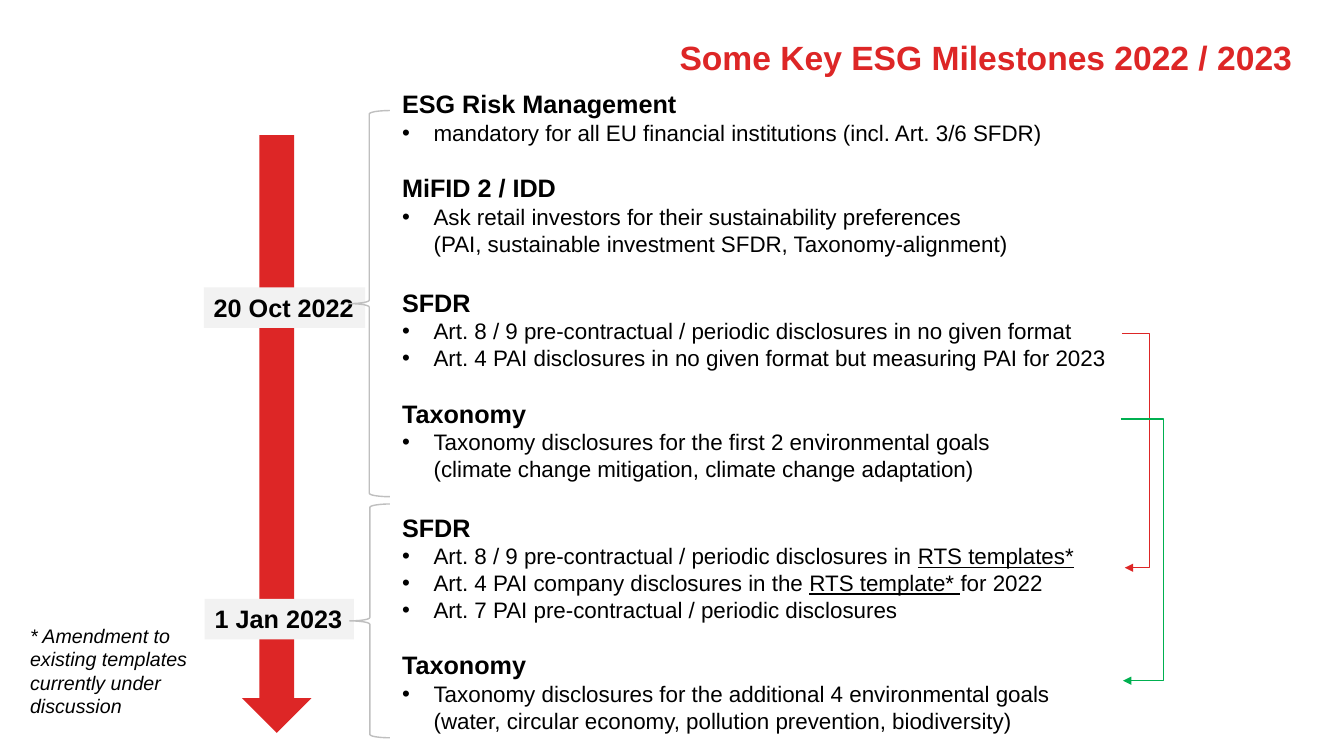
import pptx
import pptx.util
import pptx.dml.color
import pptx.enum.shapes
import pptx.enum.text
import pptx.oxml
import pptx.oxml.ns

Pt = pptx.util.Pt
qn = pptx.oxml.ns.qn
SHAPES = pptx.enum.shapes.MSO_SHAPE

# Content
COLORS = {"red": "DD2626", "green": "00B050", "label": "F2F2F2",
          "brace": "BFBFBF", "text": "000000"}
FONT = "Arial"
TITLE = "Some Key ESG Milestones 2022 / 2023"
FOOTNOTE = "* Amendment to existing templates\ncurrently under discussion"

# Heading, gap above it in points, bullets; each bullet is a list of runs,
# and a run given as a one-item tuple is underlined
MILESTONES = [
    ("ESG Risk Management", 0, [
        ["mandatory for all EU financial institutions (incl. Art. 3/6 SFDR)"]]),
    ("MiFID 2 / IDD", 19.2, [
        ["Ask retail investors for their sustainability preferences\n"
         "(PAI, sustainable investment SFDR, Taxonomy-alignment)"]]),
    ("SFDR", 21.6, [
        ["Art. 8 / 9 pre-contractual / periodic disclosures in no given format"],
        ["Art. 4 PAI disclosures in no given format but measuring PAI for 2023"]]),
    ("Taxonomy", 19.2, [
        ["Taxonomy disclosures for the first 2 environmental goals\n"
         "(climate change mitigation, climate change adaptation)"]]),
    ("SFDR", 21.6, [
        ["Art. 8 / 9 pre-contractual / periodic disclosures in ", ("RTS templates*",)],
        ["Art. 4 PAI company disclosures in the ", ("RTS template* ",), "for 2022"],
        ["Art. 7 PAI pre-contractual / periodic disclosures"]]),
    ("Taxonomy", 19.2, [
        ["Taxonomy disclosures for the additional 4 environmental goals\n"
         "(water, circular economy, pollution prevention, biodiversity)"]]),
]

# Places: left, top, width, height
TITLE_BOX = (356.4, 23, 573.8, 33.8)
BODY_BOX = (280, 59.8, 592, 494.6)
FOOTNOTE_BOX = (14.4, 442, 136.8, 74.9)
TIME_ARROW = (172.8, 96.5, 49.7, 427)
DATES = [("20 Oct 2022", (145.6, 205.2, 115.2, 29)),
         ("1 Jan 2023", (146.2, 427.7, 106.6, 29))]
BRACES = [(249, 79, 29.5, 275.8), (249.8, 360, 28.8, 167)]
# Colour, start, end, x of the bend
LINKS = [("red", (801.4, 238), (803.5, 405.5), 821.1),
         ("green", (800.7, 299.2), (802.1, 486.2), 831.5)]


def rgb(name):
    return pptx.dml.color.RGBColor.from_string(COLORS[name])


def place(shape, box):
    shape.left, shape.top, shape.width, shape.height = [Pt(v) for v in box]


def prepare(frame, wrap=True):
    frame.word_wrap = wrap
    frame.auto_size = pptx.enum.text.MSO_AUTO_SIZE.NONE
    frame.vertical_anchor = pptx.enum.text.MSO_ANCHOR.TOP
    frame.margin_left = frame.margin_right = Pt(7.2)
    frame.margin_top = frame.margin_bottom = Pt(3.6)


def write(paragraph, runs, size, color="text", bold=False, italic=False, gap=0,
          align=pptx.enum.text.PP_ALIGN.LEFT):
    paragraph.alignment = align
    paragraph.line_spacing = Pt(size * 1.2)
    paragraph.space_before = Pt(gap)
    paragraph.space_after = Pt(0)
    for item in runs:
        underlined = isinstance(item, tuple)
        text = item[0] if underlined else item
        for number, line in enumerate(text.split("\n")):
            if number:
                paragraph.add_line_break()
            run = paragraph.add_run()
            run.text = line
            run.font.name = FONT
            run.font.size = Pt(size)
            run.font.bold = bold
            run.font.italic = italic
            run.font.underline = underlined
            run.font.color.rgb = rgb(color)


def set_bullet(paragraph, indent, character=None):
    properties = paragraph._p.get_or_add_pPr()
    properties.set("marL", str(Pt(indent)))
    properties.set("indent", str(-Pt(indent)))
    if character:
        bullet = pptx.oxml.parse_xml(
            f'<a:buChar {pptx.oxml.ns.nsdecls("a")} char="{character}"/>')
    else:
        bullet = pptx.oxml.parse_xml(f'<a:buNone {pptx.oxml.ns.nsdecls("a")}/>')
    properties.append(bullet)


def add_shape(kind, box, fill=None, line=None):
    shape = slide.shapes.add_shape(kind, *[Pt(v) for v in box])
    shape.shadow.inherit = False
    if fill:
        shape.fill.solid()
        shape.fill.fore_color.rgb = rgb(fill)
    else:
        shape.fill.background()
    if line:
        shape.line.color.rgb = rgb(line)
        shape.line.width = Pt(1)
    else:
        shape.line.fill.background()
    return shape


presentation = pptx.Presentation()
presentation.slide_width, presentation.slide_height = Pt(960), Pt(540)
slide = presentation.slides.add_slide(presentation.slide_layouts[1])

# Title
title = slide.shapes.title
place(title, TITLE_BOX)
prepare(title.text_frame)
write(title.text_frame.paragraphs[0], [TITLE], 24, "red", bold=True,
      align=pptx.enum.text.PP_ALIGN.RIGHT)

# Milestone list
body = slide.placeholders[1]
place(body, BODY_BOX)
prepare(body.text_frame)
for index, (heading, gap, bullets) in enumerate(MILESTONES):
    frame = body.text_frame
    paragraph = frame.add_paragraph() if index else frame.paragraphs[0]
    write(paragraph, [heading], 18, bold=True, gap=gap)
    set_bullet(paragraph, 0)
    for runs in bullets:
        paragraph = frame.add_paragraph()
        write(paragraph, runs, 16)
        set_bullet(paragraph, 22.5, "•")

# Time arrow with its dates
add_shape(SHAPES.DOWN_ARROW, TIME_ARROW, fill="red")
for date, box in DATES:
    label = add_shape(SHAPES.RECTANGLE, box, fill="label")
    prepare(label.text_frame, wrap=False)
    write(label.text_frame.paragraphs[0], [date], 18, bold=True)

# Links from 2022 items to 2023 items
for color, start, end, bend in LINKS:
    link = slide.shapes.add_connector(pptx.enum.shapes.MSO_CONNECTOR.ELBOW,
                                      *[Pt(v) for v in start + end])
    link.line.color.rgb = rgb(color)
    link.line.width = Pt(1)
    properties = link._element.spPr
    guides = properties.find(qn("a:prstGeom")).get_or_add_avLst()
    ratio = round((bend - start[0]) / (end[0] - start[0]) * 100000)
    guides.append(pptx.oxml.parse_xml(
        f'<a:gd {pptx.oxml.ns.nsdecls("a")} name="adj1" fmla="val {ratio}"/>'))
    link.line._get_or_add_ln().append(pptx.oxml.parse_xml(
        f'<a:tailEnd {pptx.oxml.ns.nsdecls("a")} type="triangle"/>'))
    properties.append(pptx.oxml.parse_xml(
        f'<a:effectLst {pptx.oxml.ns.nsdecls("a")}/>'))

# Braces
for box in BRACES:
    add_shape(SHAPES.LEFT_BRACE, box, line="brace")

# Footnote
footnote = slide.shapes.add_textbox(*[Pt(v) for v in FOOTNOTE_BOX])
prepare(footnote.text_frame)
write(footnote.text_frame.paragraphs[0], [FOOTNOTE], 14, italic=True)

presentation.save("out.pptx")
